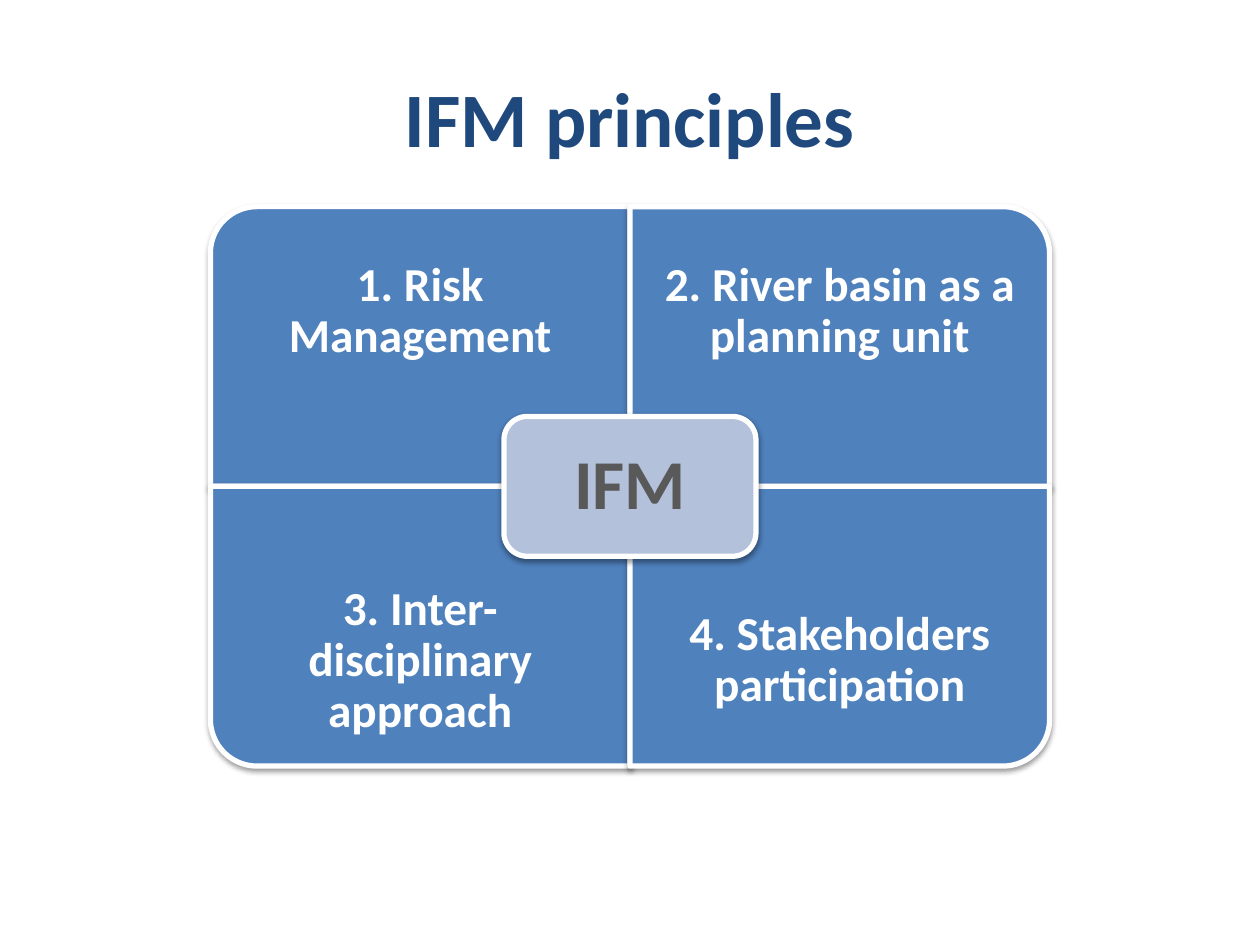
"""Build the IFM principles slide: four quadrants around a central label."""
import lxml.etree
import pptx
import pptx.dml.color
import pptx.enum.shapes
import pptx.enum.text
import pptx.oxml
import pptx.oxml.ns
import pptx.util

Inches = pptx.util.Inches
SHAPE = pptx.enum.shapes.MSO_SHAPE

TITLE = "IFM principles"
CENTRE = "IFM"
QUADRANTS = [
    ("1. Risk Management", 0, 0, 270),
    ("2. River basin as a planning unit", 1, 0, 0),
    ("3. Inter-disciplinary approach", 0, 1, 180),
    ("4. Stakeholders participation", 1, 1, 90),
]
THEME = {
    "font": "Calibri",
    "title": "1F497D", "quadrant": "4F81BD", "centre": "B3C1DB",
    "edge": "FFFFFF", "light": "FFFFFF", "dark": "595959",
    "title_size": 44, "quadrant_size": 27, "centre_size": 40, "edge_width": 3,
}
LEFT, TOP = 1.67, 1.64
QUAD_W, QUAD_H, LABEL_H = 3.33, 2.22, 1.67
CENTRE_W, CENTRE_H, CENTRE_PAD = 2, 1.11, 0.05


def rgb(name):
    """Return a theme colour."""
    return pptx.dml.color.RGBColor.from_string(THEME[name])


def write(tf, text, size, color, spacing=None, inset=None):
    """Write bold centred text into a text frame."""
    tf.word_wrap = True
    tf.vertical_anchor = pptx.enum.text.MSO_ANCHOR.MIDDLE
    if inset is not None:
        tf.margin_left = tf.margin_right = Inches(inset)
        tf.margin_top = tf.margin_bottom = Inches(inset)
    p = tf.paragraphs[0]
    p.alignment = pptx.enum.text.PP_ALIGN.CENTER
    if spacing:
        p.line_spacing = spacing
    r = p.add_run()
    r.text = text
    r.font.name = THEME["font"]
    r.font.size = pptx.util.Pt(THEME[size])
    r.font.bold = True
    r.font.color.rgb = rgb(color)


def add_panel(shapes, kind, x, y, w, h, fill, rotation=0):
    """Add a white-edged panel with a soft shadow, turned about its centre."""
    if rotation % 180:
        x, y, w, h = x + (w - h) / 2, y + (h - w) / 2, h, w
    sp = shapes.add_shape(kind, Inches(x), Inches(y), Inches(w), Inches(h))
    sp.rotation = rotation
    sp.fill.solid()
    sp.fill.fore_color.rgb = rgb(fill)
    sp.line.color.rgb = rgb("edge")
    sp.line.width = pptx.util.Pt(THEME["edge_width"])
    sp.shadow.inherit = False
    effects = sp.element.spPr.find(pptx.oxml.ns.qn("a:effectLst"))
    effects.append(pptx.oxml.parse_xml(
        f'<a:outerShdw {pptx.oxml.ns.nsdecls("a")} blurRad="40000" dist="20000" '
        'dir="5400000" rotWithShape="0"><a:srgbClr val="000000">'
        '<a:alpha val="38000"/></a:srgbClr></a:outerShdw>'))


def add_label(shapes, x, y, w, h, text, **fmt):
    """Add a text box."""
    box = shapes.add_textbox(Inches(x), Inches(y), Inches(w), Inches(h))
    write(box.text_frame, text, spacing=0.9, **fmt)


def main():
    """Lay out the slide and save it."""
    prs = pptx.Presentation()
    prs.slide_width, prs.slide_height = Inches(10), Inches(7.5)
    s = prs.slides.add_slide(prs.slide_layouts[5])
    title = s.shapes.title
    title.left, title.top = Inches(0.5), Inches(0.3)
    title.width, title.height = Inches(9), Inches(1.25)
    write(title.text_frame, TITLE, "title_size", "title")

    shapes = s.shapes.add_group_shape().shapes
    for text, col, row, rotation in QUADRANTS:
        x, y = LEFT + col * QUAD_W, TOP + row * QUAD_H
        add_panel(shapes, SHAPE.ROUND_1_RECTANGLE, x, y, QUAD_W, QUAD_H,
                  "quadrant", rotation)
        add_label(shapes, x, y + row * (QUAD_H - LABEL_H), QUAD_W, LABEL_H, text,
                  size="quadrant_size", color="light", inset=0.21)

    x, y = LEFT + QUAD_W - CENTRE_W / 2, TOP + QUAD_H - CENTRE_H / 2
    add_panel(shapes, SHAPE.ROUNDED_RECTANGLE, x, y, CENTRE_W, CENTRE_H, "centre")
    add_label(shapes, x + CENTRE_PAD, y + CENTRE_PAD, CENTRE_W - 2 * CENTRE_PAD,
              CENTRE_H - 2 * CENTRE_PAD, CENTRE,
              size="centre_size", color="dark", inset=0.17)
    prs.save("out.pptx")


if __name__ == "__main__":
    main()
